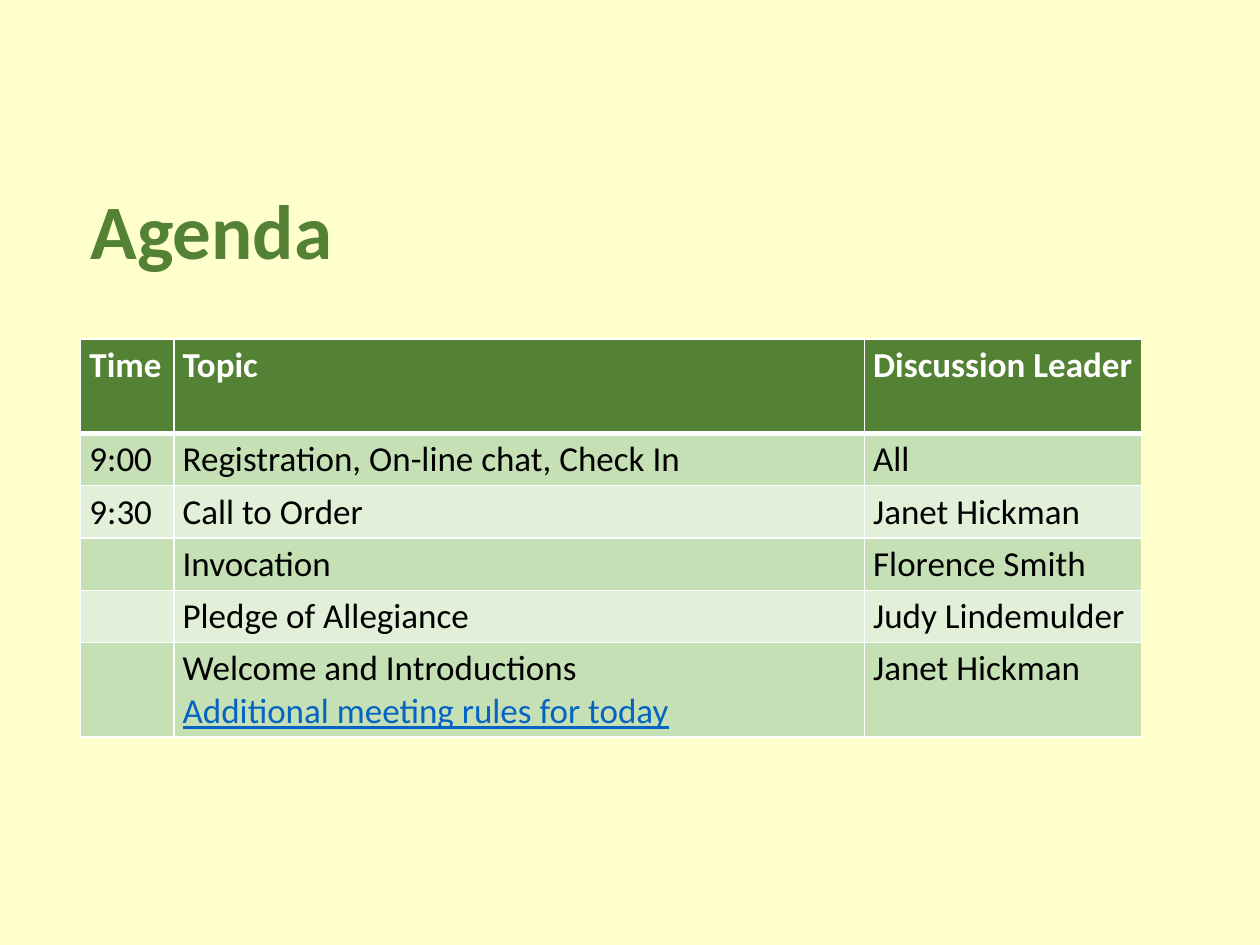
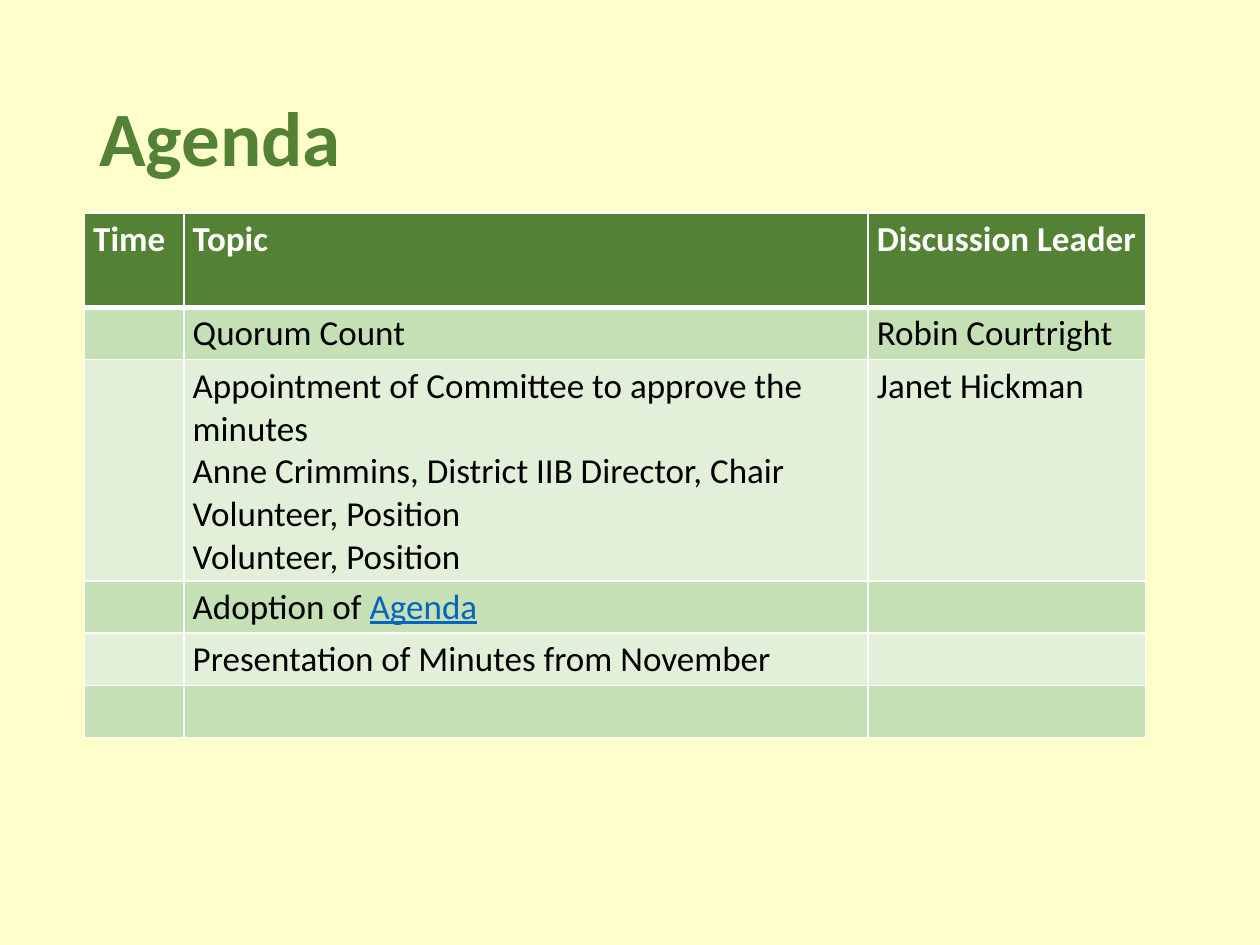
from lxml import etree
from pptx import Presentation
from pptx.dml.color import RGBColor
from pptx.enum.text import MSO_ANCHOR
from pptx.oxml.ns import qn
from pptx.util import Inches, Pt

MIDDLE = MSO_ANCHOR.MIDDLE
FONT = "Calibri"
COLOURS = {
    "background": "FFFFCC",
    "green": "548235",
    "dark_band": "C5E0B4",
    "light_band": "E2F0D9",
    "white": "FFFFFF",
    "black": "000000",
    "link": "0563C1",
}
SLIDE_WIDTH, SLIDE_HEIGHT = Inches(10), Inches(7.5)
GRID_COLUMN = SLIDE_WIDTH / 100
GRID_ROW = SLIDE_HEIGHT / 75
LINE_ROWS, PADDING_ROWS = 3.35, 0.8
HEADER = ("Time", "Topic", "Discussion Leader")
HEADER_LINES = 2
LINK_MARK = "|"

OPENING_ITEMS = [
    (1, "9:00", "Registration, On-line chat, Check In", "All"),
    (1, "9:30", "Call to Order", "Janet Hickman"),
    (1, "", "Invocation", "Florence Smith"),
    (1, "", "Pledge of Allegiance", "Judy Lindemulder"),
    (2, "", "Welcome and Introductions\n|Additional meeting rules for today|", "Janet Hickman"),
]
BUSINESS_ITEMS = [
    (1, "", "Quorum Count", "Robin Courtright"),
    (5, "", "Appointment of Committee to approve the minutes\n"
     "Anne Crimmins, District IIB Director, Chair\n"
     "Volunteer, Position\nVolunteer, Position", "Janet Hickman"),
    (1, "", "Adoption of |Agenda|", ""),
    (1, "", "Presentation of Minutes from November", ""),
    (1, "", "", ""),
]


def across(columns):
    return round(columns * GRID_COLUMN)


def down(rows):
    return round(rows * GRID_ROW)


def colour(name):
    return RGBColor.from_string(COLOURS[name])


def write_text(frame, text, size=20, color="black", bold=False, line_spacing=None):
    for index, line in enumerate(text.split("\n")):
        paragraph = frame.paragraphs[0] if index == 0 else frame.add_paragraph()
        paragraph.line_spacing = line_spacing
        paragraph.font.size = Pt(size)
        for position, part in enumerate(line.split(LINK_MARK)):
            if not part:
                continue
            is_link = position % 2 == 1
            run = paragraph.add_run()
            run.text = part
            run.font.name = FONT
            run.font.size = Pt(size)
            run.font.bold = bold
            run.font.underline = is_link
            run.font.color.rgb = colour("link" if is_link else color)


def add_title(slide, text, left, top, width, height):
    box = slide.shapes.add_textbox(across(left), down(top), across(width), down(height))
    frame = box.text_frame
    frame.word_wrap = True
    frame.vertical_anchor = MIDDLE
    write_text(frame, text, size=44, color="green", bold=True, line_spacing=0.9)


def set_borders(cell, **widths):
    properties = cell._tc.get_or_add_tcPr()
    for side in ("L", "R", "T", "B"):
        line = etree.SubElement(properties, qn(f"a:ln{side}"), w=str(Pt(widths.get(side, 1))))
        fill = etree.SubElement(line, qn("a:solidFill"))
        etree.SubElement(fill, qn("a:srgbClr"), val=COLOURS["white"])


def fill_cell(cell, text, fill, borders, **text_format):
    cell.margin_left = cell.margin_right = across(0.7)
    cell.margin_top = cell.margin_bottom = down(PADDING_ROWS / 2)
    set_borders(cell, **borders)
    cell.fill.solid()
    cell.fill.fore_color.rgb = colour(fill)
    write_text(cell.text_frame, text, **text_format)


def add_agenda_table(slide, items, left, top, column_widths):
    rows = [(HEADER_LINES, *HEADER), *items]
    heights = [lines * LINE_ROWS + PADDING_ROWS for lines, *_ in rows]
    table = slide.shapes.add_table(
        len(rows), len(column_widths), across(left), down(top),
        across(sum(column_widths)), down(sum(heights)),
    ).table
    for column, width in zip(table.columns, column_widths):
        column.width = across(width)
    for index, (_, *texts) in enumerate(rows):
        table.rows[index].height = down(heights[index])
        if index == 0:
            fill, borders, text_format = "green", {"B": 3}, {"color": "white", "bold": True}
        else:
            fill = "dark_band" if index % 2 else "light_band"
            borders, text_format = ({"T": 3} if index == 1 else {}), {}
        for cell, text in zip(table.rows[index].cells, texts):
            fill_cell(cell, text, fill, borders, **text_format)


def add_agenda_slide(presentation, items, title_place, table_place, column_widths):
    slide = presentation.slides.add_slide(presentation.slide_layouts[6])
    slide.background.fill.solid()
    slide.background.fill.fore_color.rgb = colour("background")
    add_title(slide, "Agenda", *title_place)
    add_agenda_table(slide, items, *table_place, column_widths)


def main():
    presentation = Presentation()
    presentation.slide_width, presentation.slide_height = SLIDE_WIDTH, SLIDE_HEIGHT
    add_agenda_slide(presentation, OPENING_ITEMS, (6.2, 13.2, 86.2, 10.9),
                     (6.4, 26.9), (7.4, 54.8, 22))
    add_agenda_slide(presentation, BUSINESS_ITEMS, (6.9, 4, 86.2, 14.5),
                     (6.7, 16.9), (7.9, 54.3, 22))
    presentation.save("out.pptx")


if __name__ == "__main__":
    main()
